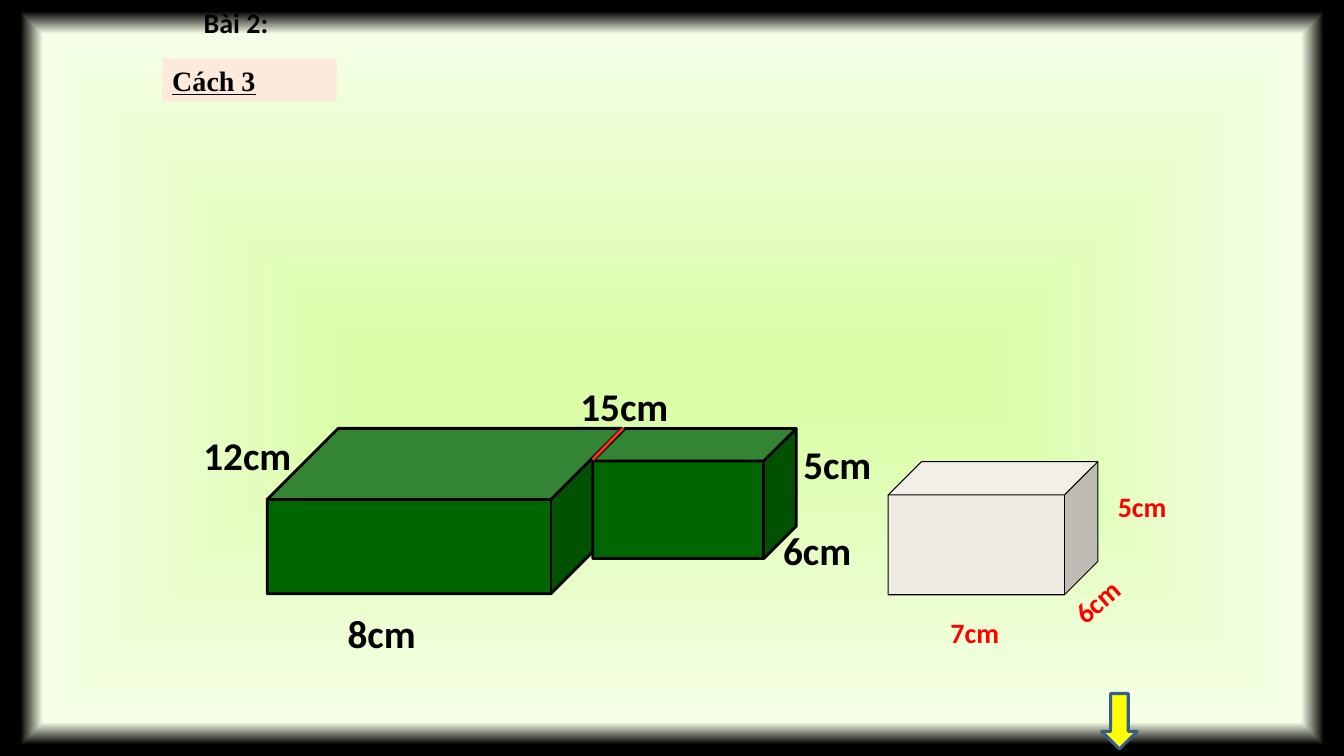
"""Build the geometry slide with a composite solid and the box to be measured."""
from dataclasses import dataclass

from lxml import etree
from pptx import Presentation
from pptx import util as u
from pptx.dml.color import RGBColor
from pptx.enum import shapes, text
from pptx.oxml.ns import qn

W, H = u.Inches(13.333), u.Inches(7.5)


@dataclass(frozen=True)
class Theme:
    """Colours, fonts and type sizes of the slide."""
    ink: str = "000000"
    green: str = "006600"
    stone: str = "EEECE1"
    red: str = "FF0000"
    seam: str = "FF3300"
    peach: str = "FDEADA"
    yellow: str = "FFFF00"
    blue: str = "385D8A"
    glow: tuple = ((8, "DAFDA7"), (91, "F5FFE7"), (97, "000000"))
    sans: str = "Calibri"
    serif: str = "Times New Roman"
    large: int = 28
    small: int = 20


T = Theme()


def share(x, y):
    """Turn percentages of the slide's width and height into lengths."""
    return int(W * x / 100), int(H * y / 100)


def paint_background(s):
    """Fill the background with a gradient that runs from the centre to the edges."""
    s.background.fill.gradient()
    grad = s.element.find(".//" + qn("a:gradFill"))
    for child in list(grad):
        grad.remove(child)
    stops = etree.SubElement(grad, qn("a:gsLst"))
    for pos, colour in T.glow:
        stop = etree.SubElement(stops, qn("a:gs"), pos=str(pos * 1000))
        etree.SubElement(stop, qn("a:srgbClr"), val=colour)
    route = etree.SubElement(grad, qn("a:path"), path="shape")
    etree.SubElement(route, qn("a:fillToRect"), {side: "50000" for side in "ltrb"})


def write(sp, words, size, colour=T.ink, font=T.sans, underline=None):
    """Set bold, left-aligned text at the top of a shape."""
    tf = sp.text_frame
    tf.text = words
    tf.word_wrap = True
    tf.auto_size = text.MSO_AUTO_SIZE.NONE
    tf.vertical_anchor = text.MSO_ANCHOR.TOP
    p = tf.paragraphs[0]
    p.alignment = text.PP_ALIGN.LEFT
    r = p.runs[0]
    r.font.name, r.font.size, r.font.bold = font, u.Pt(size), True
    r.font.underline = underline
    r.font.color.rgb = RGBColor.from_string(colour)


def add_title(s, words, x, y, w, h):
    """Move the title placeholder and write the heading in it."""
    sp = s.shapes.title
    sp.left, sp.top = share(x, y)
    sp.width, sp.height = share(w, h)
    write(sp, words, T.small)
    tf = sp.text_frame
    tf.margin_left = tf.margin_right = u.Inches(0.1)
    tf.margin_top = tf.margin_bottom = u.Inches(0.05)


def add_label(s, words, x, y, w, size=T.large, colour=T.ink, turn=0):
    """Add a measurement, one line high."""
    h = 7.6 if size == T.large else 5.73
    sp = s.shapes.add_textbox(*share(x, y), *share(w, h))
    sp.rotation = turn
    write(sp, words, size, colour)


def add_block(s, kind, x, y, w, h, fill, line=None, weight=0):
    """Add a filled preset shape with an optional outline."""
    sp = s.shapes.add_shape(kind, *share(x, y), *share(w, h))
    sp.shadow.inherit = False
    sp.fill.solid()
    sp.fill.fore_color.rgb = RGBColor.from_string(fill)
    if line:
        sp.line.color.rgb = RGBColor.from_string(line)
        sp.line.width = u.Pt(weight)
    else:
        sp.line.fill.background()
    return sp


def add_cube(s, x, y, w, h, depth, fill, weight):
    """Add a cube whose depth is a share of its shorter side."""
    sp = add_block(s, shapes.MSO_SHAPE.CUBE, x, y, w, h, fill, T.ink, weight)
    sp.adjustments[0] = depth


def add_seam(s, x1, y1, x2, y2):
    """Draw the line where the two blocks meet."""
    sp = s.shapes.add_connector(shapes.MSO_CONNECTOR.STRAIGHT, *share(x1, y1), *share(x2, y2))
    sp.line.color.rgb = RGBColor.from_string(T.seam)
    sp.line.width = u.Pt(2)
    etree.SubElement(sp.element.spPr, qn("a:effectLst"))


def add_solid(s):
    """Draw the composite solid with its five measurements."""
    add_cube(s, 19.88, 56.67, 26.4, 21.87, 0.43, T.green, 2)
    add_cube(s, 44.1, 56.67, 15.15, 17.2, 0.25, T.green, 2)
    add_seam(s, 44.1, 60.8, 46.35, 56.67)
    for words, x, y, w in (("12cm", 14.4, 56.4, 11.25), ("15cm", 42.45, 49.87, 12.08),
                           ("5cm", 59.03, 57.6, 7.35), ("6cm", 57.53, 68.93, 6.83),
                           ("8cm", 25.13, 80, 6.9)):
        add_label(s, words, x, y, w)


def add_small_box(s):
    """Draw the separate box with its three measurements."""
    add_cube(s, 66.08, 61.07, 15.6, 17.6, 0.25, T.stone, 0.75)
    for words, x, y, w, turn in (("7cm", 69.98, 80.8, 7.28, 0), ("5cm", 82.43, 64.13, 7.28, 0),
                                 ("6cm", 78.45, 73.87, 9.9, 318.7)):
        add_label(s, words, x, y, w, T.small, T.red, turn)


def main():
    """Build and save the slide."""
    prs = Presentation()
    prs.slide_width, prs.slide_height = W, H
    s = prs.slides.add_slide(prs.slide_layouts[5])
    paint_background(s)
    add_solid(s)
    add_small_box(s)
    add_title(s, "Bài 2:", 14.4, 0, 16.28, 5.73)
    arrow = add_block(s, shapes.MSO_SHAPE.RIGHT_ARROW, 81.23, 93.07, 4.13, 4.67,
                      T.yellow, T.blue, 2.25)
    arrow.rotation = 90
    method = add_block(s, shapes.MSO_SHAPE.RECTANGLE, 12.08, 7.73, 12.98, 5.73, T.peach)
    write(method, "Cách 3", T.small, font=T.serif, underline=True)
    prs.save("out.pptx")


if __name__ == "__main__":
    main()
